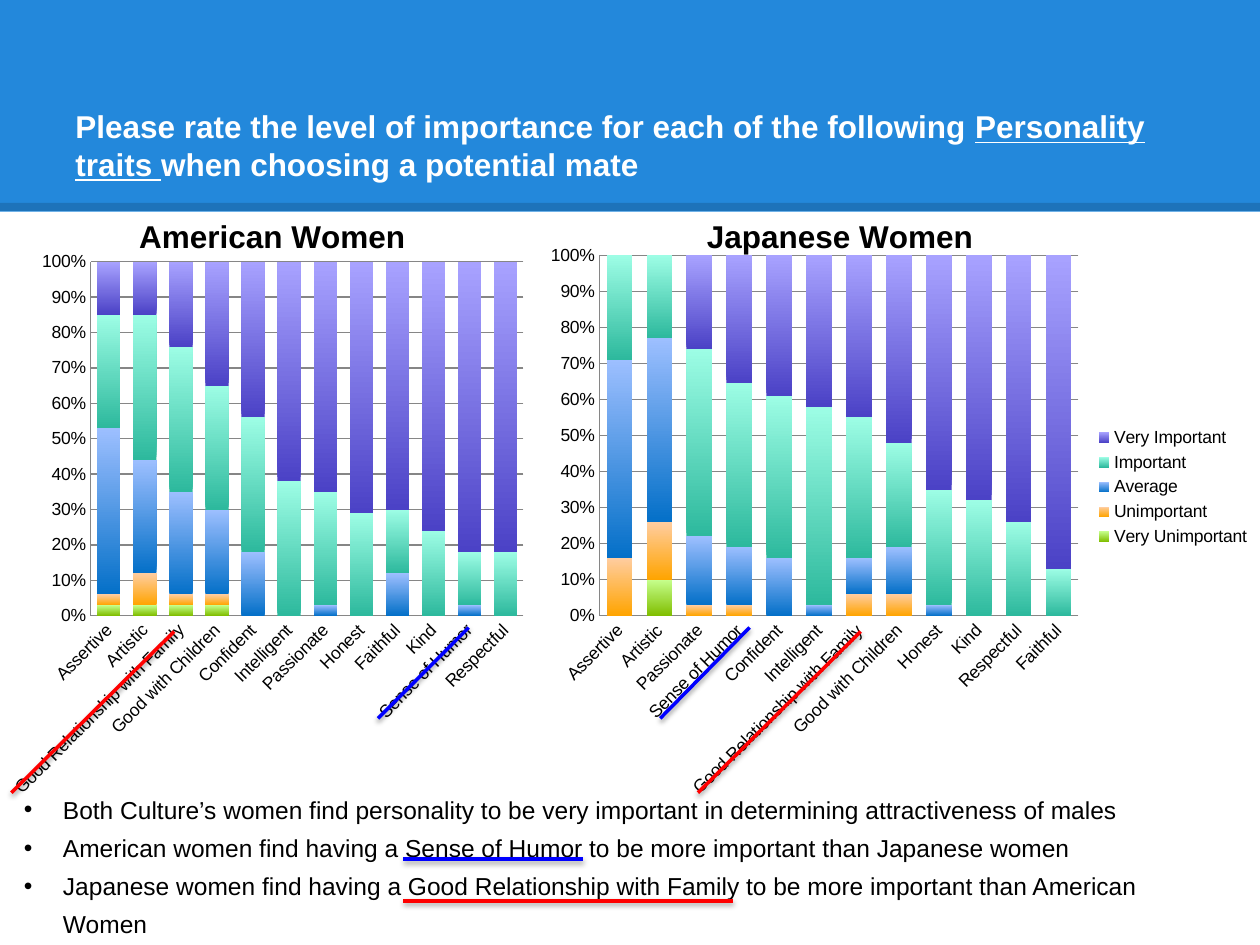
from dataclasses import dataclass

from lxml.etree import SubElement
from pptx import Presentation
from pptx.chart.data import CategoryChartData
from pptx.dml.color import RGBColor
from pptx.enum.chart import XL_CHART_TYPE, XL_LEGEND_POSITION, XL_TICK_MARK
from pptx.enum.shapes import MSO_CONNECTOR, MSO_SHAPE
from pptx.enum.text import MSO_ANCHOR
from pptx.oxml import parse_xml
from pptx.oxml.ns import nsdecls, qn
from pptx.util import Cm, Pt


@dataclass(frozen=True)
class Theme:
    font: str = "Arial"
    band: str = "2388DB"
    white: str = "FFFFFF"
    black: str = "000000"
    grid: str = "868686"
    red: str = "FF0000"
    blue: str = "0000FF"
    heading: int = 18
    body: int = 14
    label: int = 10


@dataclass(frozen=True)
class Box:
    left: float
    top: float
    width: float
    height: float

    def lengths(self):
        return [Cm(n) for n in (self.left, self.top, self.width, self.height)]


THEME = Theme()
LEVELS = {
    "Very Unimportant": ("80BE00", "C6FF8D"),
    "Unimportant": ("FFA400", "FFCDA0"),
    "Average": ("0470C8", "9DBFFF"),
    "Important": ("2DB99D", "9DFDE5"),
    "Very Important": ("4B42C6", "A8A2FF"),
}
AMERICAN = {
    "Assertive": (3, 3, 47, 32, 15),
    "Artistic": (3, 9, 32, 41, 15),
    "Good Relationship with Family": (3, 3, 29, 41, 24),
    "Good with Children": (3, 3, 24, 35, 35),
    "Confident": (0, 0, 18, 38, 44),
    "Intelligent": (0, 0, 0, 38, 62),
    "Passionate": (0, 0, 3, 32, 65),
    "Honest": (0, 0, 0, 29, 71),
    "Faithful": (0, 0, 12, 18, 70),
    "Kind": (0, 0, 0, 24, 76),
    "Sense of Humor": (0, 0, 3, 15, 82),
    "Respectful": (0, 0, 0, 18, 82),
}
JAPANESE = {
    "Assertive": (0, 16, 55, 29, 0),
    "Artistic": (10, 16, 51, 23, 0),
    "Passionate": (0, 3, 19, 52, 26),
    "Sense of Humor": (0, 3, 16, 45, 35),
    "Confident": (0, 0, 16, 45, 39),
    "Intelligent": (0, 0, 3, 55, 42),
    "Good Relationship with Family": (0, 6, 10, 39, 45),
    "Good with Children": (0, 6, 13, 29, 52),
    "Honest": (0, 0, 3, 32, 65),
    "Kind": (0, 0, 0, 32, 68),
    "Respectful": (0, 0, 0, 26, 74),
    "Faithful": (0, 0, 0, 13, 87),
}


def apply(target, **formats):
    for name, value in formats.items():
        setattr(target, name, value)


def style_font(font, size, color, **formats):
    apply(font, name=THEME.font, size=Pt(size), **formats)
    font.color.rgb = RGBColor.from_string(color)


def add_line(page, box, start, end, color, width=2, alpha=None):
    points = [Cm(n) for n in (box.left + start[0], box.top + start[1],
                              box.left + end[0], box.top + end[1])]
    line = page.shapes.add_connector(MSO_CONNECTOR.STRAIGHT, *points)
    line.line.width = Pt(width)
    line.line.color.rgb = RGBColor.from_string(color)
    effects = SubElement(line._element.spPr, qn("a:effectLst"))
    if alpha:
        tint = line._element.spPr.find(".//" + qn("a:srgbClr"))
        SubElement(tint, qn("a:alpha"), val=str(alpha * 1000))
    else:
        shadow = SubElement(effects, qn("a:outerShdw"), blurRad=str(Pt(3.1)),
                            dist=str(Pt(1.6)), dir="5400000", rotWithShape="0")
        tint = SubElement(shadow, qn("a:srgbClr"), val=THEME.black)
        SubElement(tint, qn("a:alpha"), val="38000")


def add_header(page, box, spans):
    band = page.shapes.add_shape(MSO_SHAPE.RECTANGLE, *box.lengths())
    band.shadow.inherit = False
    band.fill.solid()
    band.fill.fore_color.rgb = RGBColor.from_string(THEME.band)
    band.line.fill.background()
    edge = box.height - 0.1
    add_line(page, box, (0, edge), (box.width, edge), THEME.black, 4.5, 15)

    title = Box(box.left + 1.27, box.top + 0.76, box.width - 2.54, 3.18)
    frame = page.shapes.add_textbox(*title.lengths()).text_frame
    inset = Cm(0.25)
    apply(frame, word_wrap=True, vertical_anchor=MSO_ANCHOR.BOTTOM, margin_left=inset,
          margin_right=inset, margin_top=inset, margin_bottom=inset)
    for text, underline in spans:
        span = frame.paragraphs[0].add_run()
        span.text = text
        style_font(span.font, THEME.heading, THEME.white, bold=True, underline=underline)


def set_layout(parent, index, inner=False, **fractions):
    for old in parent.findall(qn("c:layout")):
        parent.remove(old)
    layout = parent.makeelement(qn("c:layout"))
    manual = SubElement(layout, qn("c:manualLayout"))
    if inner:
        SubElement(manual, qn("c:layoutTarget"), val="inner")
    for side in ("xMode", "yMode"):
        SubElement(manual, qn(f"c:{side}"), val="edge")
    for name, value in fractions.items():
        SubElement(manual, qn(f"c:{name}"), val=str(value))
    parent.insert(index, layout)


def add_chart_panel(page, box, title, ratings, plot_area, title_area, marks, legend_area=None):
    data = CategoryChartData()
    data.categories = list(ratings)
    for level, values in zip(LEVELS, zip(*ratings.values())):
        data.add_series(level, values)
    chart = page.shapes.add_chart(
        XL_CHART_TYPE.COLUMN_STACKED_100, *box.lengths(), data).chart
    style_font(chart.font, THEME.label, THEME.black)
    chart._chartSpace.find(qn("c:txPr")).addprevious(parse_xml(
        f'<c:spPr {nsdecls("c", "a")}><a:noFill/><a:ln><a:noFill/></a:ln></c:spPr>'))

    chart.has_title = True
    heading = chart.chart_title
    heading.text_frame.text = title
    style_font(heading.text_frame.paragraphs[0].runs[0].font,
               THEME.heading, THEME.black, bold=True)
    set_layout(heading._element, 1, **title_area)
    set_layout(chart._chartSpace.chart.plotArea, 0, inner=True, **plot_area)

    apply(chart.plots[0], gap_width=55, overlap=100, vary_by_categories=False)
    for series, colors in zip(chart.plots[0].series, LEVELS.values()):
        fill = series.format.fill
        fill.gradient()
        fill.gradient_angle = 90
        for stop, color in zip(fill.gradient_stops, colors):
            stop.color.rgb = RGBColor.from_string(color)

    chart.value_axis.has_major_gridlines = True
    apply(chart.value_axis.tick_labels, number_format="0%", number_format_is_linked=False)
    for axis in (chart.category_axis, chart.value_axis):
        apply(axis, major_tick_mark=XL_TICK_MARK.NONE, minor_tick_mark=XL_TICK_MARK.NONE)
        style_font(axis.tick_labels.font, THEME.label, THEME.black)
    for owner in (chart.category_axis, chart.value_axis, chart.value_axis.major_gridlines):
        owner.format.line.width = Pt(0.75)
        owner.format.line.color.rgb = RGBColor.from_string(THEME.grid)
    chart.category_axis._element.find(
        qn("c:txPr")).find(qn("a:bodyPr")).set("rot", "-2700000")

    chart.has_legend = legend_area is not None
    if legend_area:
        apply(chart.legend, position=XL_LEGEND_POSITION.RIGHT, include_in_layout=False)
        style_font(chart.legend.font, THEME.label, THEME.black)
        set_layout(chart.legend._element, 1, **legend_area)
    for mark in marks:
        add_line(page, box, *mark)


def add_findings(page, box, findings, marks):
    frame = page.shapes.add_textbox(*box.lengths()).text_frame
    frame.word_wrap = True
    for index, text in enumerate(findings):
        para = frame.add_paragraph() if index else frame.paragraphs[0]
        para.line_spacing = 1.3
        span = para.add_run()
        span.text = text
        style_font(span.font, THEME.body, THEME.black)
        settings = para._p.get_or_add_pPr()
        settings.set("marL", str(Cm(0.79)))
        settings.set("indent", str(-Cm(0.79)))
        SubElement(settings, qn("a:buFont"), typeface=THEME.font)
        SubElement(settings, qn("a:buChar"), char="•")
    for mark in marks:
        add_line(page, box, *mark)


def main():
    deck = Presentation()
    apply(deck, slide_width=Cm(25.4), slide_height=Cm(19.05))
    page = deck.slides.add_slide(deck.slide_layouts[6])
    add_header(page, Box(0, 0, 25.4, 4.27), [
        ("Please rate the level of importance for each of the following ", False),
        ("Personality", True), (" ", False), ("traits ", True),
        ("when choosing a potential mate", False)])
    add_chart_panel(
        page, Box(0, 3.33, 10.77, 12.98), "American Women", AMERICAN,
        dict(x=0.17, y=0.15, w=0.81, h=0.55), dict(x=0.25, y=0.07),
        [((7.62, 11.15), (9.45, 9.32), THEME.blue),
         ((0.23, 12.65), (3.51, 9.4), THEME.red)])
    add_chart_panel(
        page, Box(10.77, 3.33, 14.63, 12.98), "Japanese Women", JAPANESE,
        dict(x=0.09, y=0.14, w=0.66, h=0.56), dict(x=0.23, y=0.07),
        [((2.54, 11.15), (4.34, 9.32), THEME.blue),
         ((3.3, 12.65), (6.58, 9.4), THEME.red)],
        dict(x=0.77, y=0.4, w=0.22, h=0.2))
    add_findings(page, Box(0.23, 15.72, 23.9, 3.33), [
        "Both Culture’s women find personality to be very important in determining attractiveness of males",
        "American women find having a Sense of Humor to be more important than Japanese women",
        "Japanese women find having a Good Relationship with Family to be more important than American Women",
    ], [((7.9, 2.44), (14.55, 2.44), THEME.red), ((7.9, 1.6), (11.53, 1.6), THEME.blue)])
    deck.save("out.pptx")


if __name__ == "__main__":
    main()
